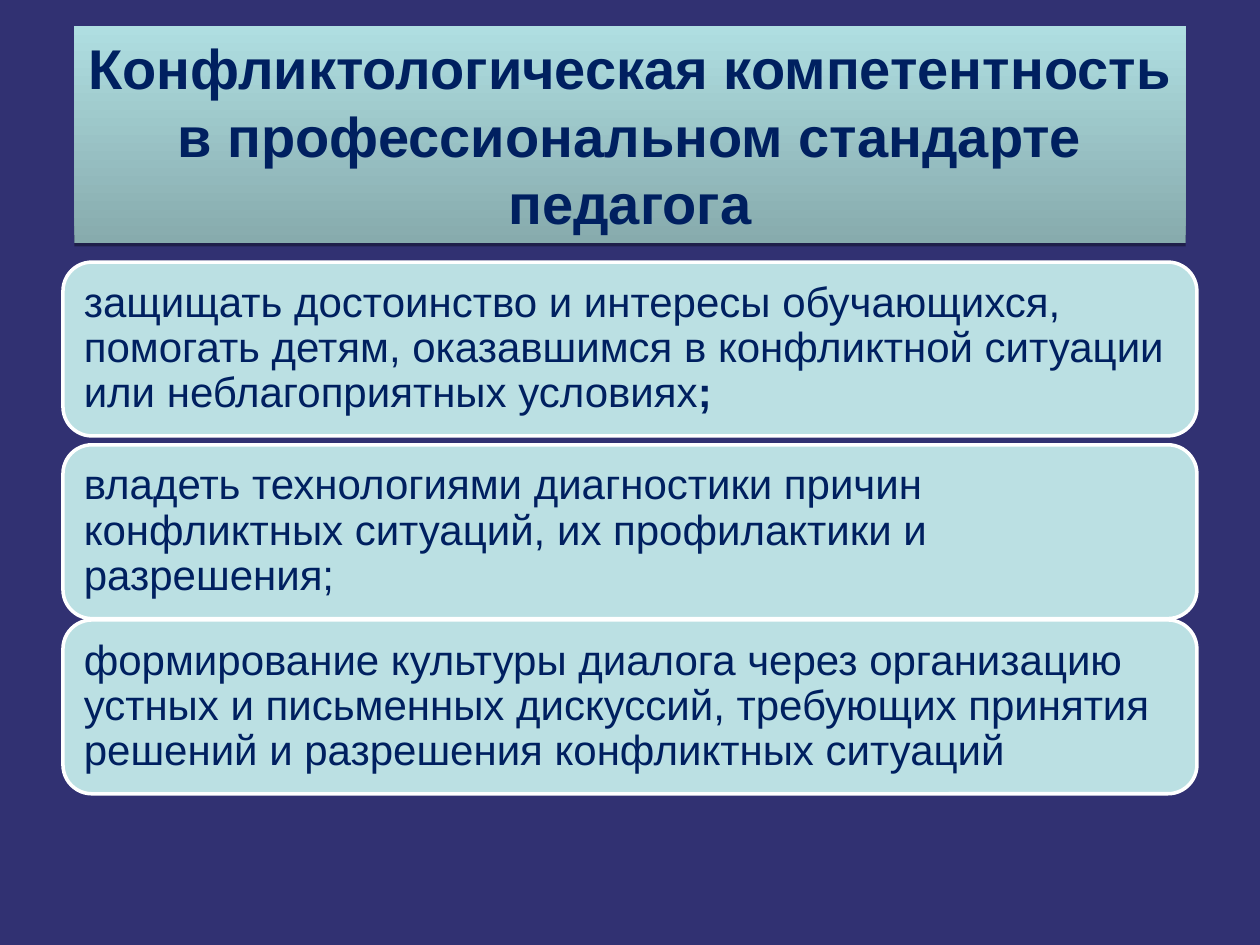
from lxml import etree
from pptx import Presentation
from pptx import util as u
from pptx.dml import color
from pptx.enum import shapes, text
from pptx.oxml import ns

FONT = "Arial"
NAVY = "002060"
TITLE = "Конфликтологическая компетентность в профессиональном стандарте педагога"
REQUIREMENTS = [
    (2.08, [("защищать достоинство и интересы обучающихся, помогать детям, "
             "оказавшимся в конфликтной ситуации или неблагоприятных условиях", False),
            (";", True)]),
    (3.53, [("владеть технологиями диагностики причин конфликтных ситуаций, "
             "их профилактики и разрешения;", False)]),
    (4.92, [("формирование культуры диалога через организацию устных и письменных "
             "дискуссий, требующих принятия решений и разрешения конфликтных ситуаций", False)]),
]


def rgb(value):
    """Return the colour for a hex string."""
    return color.RGBColor.from_string(value)


def set_font(paragraph, size):
    """Give a paragraph the slide's typeface and text colour."""
    paragraph.font.name = FONT
    paragraph.font.size = u.Pt(size)
    paragraph.font.color.rgb = rgb(NAVY)


def add_drop_shadow(shape, distance, opacity):
    """Give a shape a sharp black shadow straight below it."""
    effects = etree.SubElement(shape._element.spPr, ns.qn("a:effectLst"))
    shadow = etree.SubElement(effects, ns.qn("a:outerShdw"), blurRad="0",
                              dist=str(u.Pt(distance)), dir="5400000", rotWithShape="0")
    black = etree.SubElement(shadow, ns.qn("a:srgbClr"), val="000000")
    etree.SubElement(black, ns.qn("a:alpha"), val=str(opacity * 1000))


def place_title(slide, left, top, width, height):
    """Place the title on its gradient banner."""
    title = slide.shapes.title
    title.left, title.top = u.Inches(left), u.Inches(top)
    title.width, title.height = u.Inches(width), u.Inches(height)
    title.fill.gradient()
    title.fill.gradient_angle = 90
    for stop, value in zip(title.fill.gradient_stops, ("87ABAD", "AFDEE1")):
        stop.color.rgb = rgb(value)
    add_drop_shadow(title, 1.8, 35)
    frame = title.text_frame
    frame.text = TITLE
    frame.word_wrap = True
    frame.auto_size = text.MSO_AUTO_SIZE.NONE
    frame.vertical_anchor = text.MSO_ANCHOR.MIDDLE
    paragraph = frame.paragraphs[0]
    paragraph.alignment = text.PP_ALIGN.CENTER
    set_font(paragraph, 32)
    paragraph.font.bold = True


def add_requirement(slide, runs, left, top, width, height):
    """Add one rounded box with a requirement."""
    box = slide.shapes.add_shape(shapes.MSO_SHAPE.ROUNDED_RECTANGLE, u.Inches(left),
                                 u.Inches(top), u.Inches(width), u.Inches(height))
    box.shadow.inherit = False
    box.fill.solid()
    box.fill.fore_color.rgb = rgb("BBE0E3")
    box.line.color.rgb = rgb("FFFFFF")
    box.line.width = u.Pt(2)
    frame = box.text_frame
    frame.word_wrap = True
    frame.vertical_anchor = text.MSO_ANCHOR.MIDDLE
    frame.margin_left = frame.margin_right = u.Inches(0.1)
    frame.margin_top = frame.margin_bottom = u.Inches(0.1)
    paragraph = frame.paragraphs[0]
    paragraph.alignment = text.PP_ALIGN.LEFT
    paragraph.line_spacing = 0.9
    set_font(paragraph, 24)
    for words, bold in runs:
        run = paragraph.add_run()
        run.text = words
        if bold:
            run.font.bold = True


def main():
    """Build and save the slide."""
    presentation = Presentation()
    presentation.slide_width, presentation.slide_height = u.Inches(10), u.Inches(7.5)
    slide = presentation.slides.add_slide(presentation.slide_layouts.get_by_name("Title Only"))
    slide.background.fill.solid()
    slide.background.fill.fore_color.rgb = rgb("313172")
    place_title(slide, 0.59, 0.21, 8.82, 1.72)
    for top, runs in REQUIREMENTS:
        add_requirement(slide, runs, 0.5, top, 9, 1.38)
    presentation.save("out.pptx")


if __name__ == "__main__":
    main()
